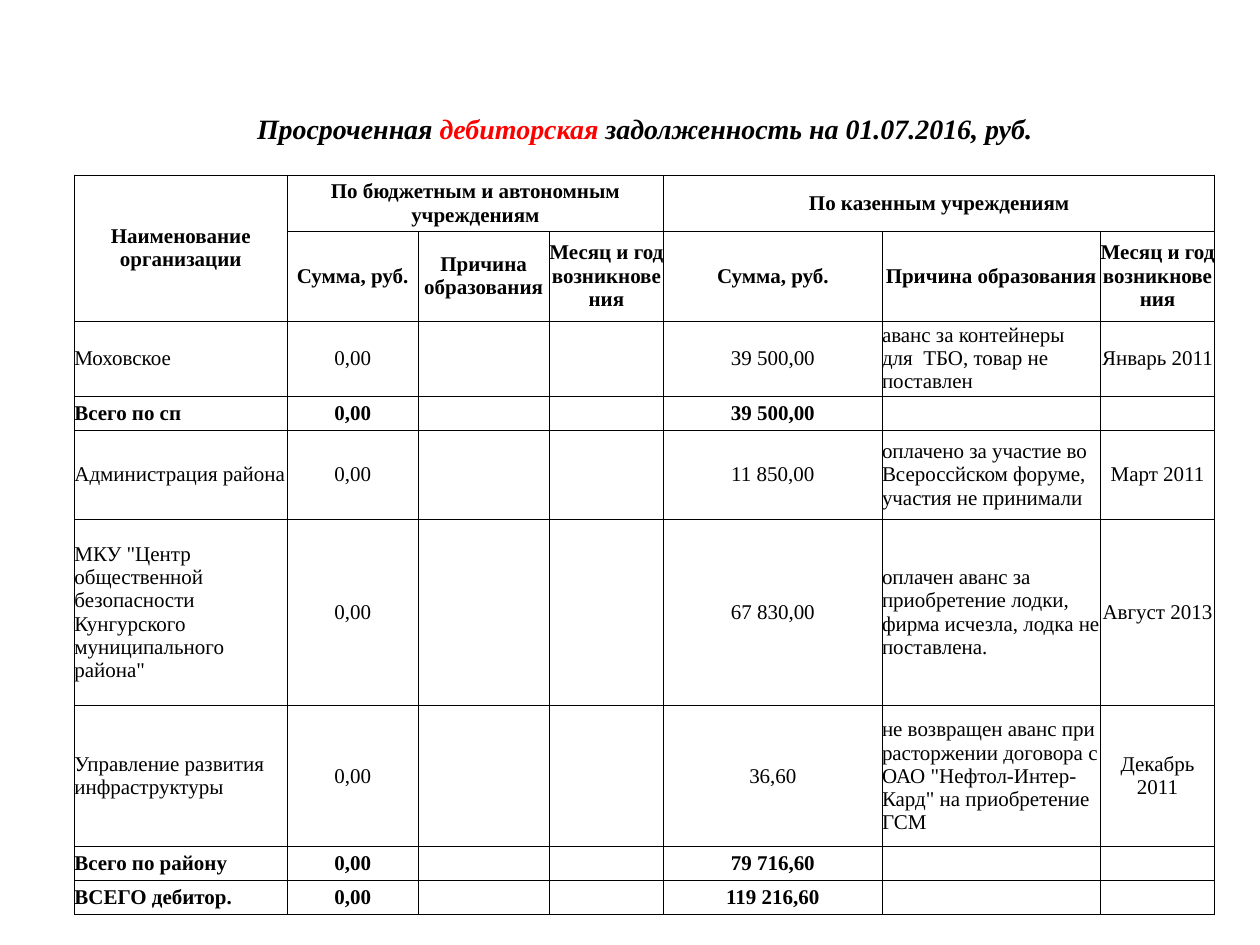
from lxml import etree
from pptx import Presentation
from pptx.dml.color import RGBColor
from pptx.enum.text import MSO_ANCHOR, PP_ALIGN
from pptx.oxml.ns import qn
from pptx.util import Cm, Pt

CENTER, LEFT = PP_ALIGN.CENTER, PP_ALIGN.LEFT
MIDDLE = MSO_ANCHOR.MIDDLE

COLUMN_WIDTHS = [4.29, 2.64, 2.64, 2.31, 4.4, 4.4, 2.31]
ROW_HEIGHTS = [1.8, 1.14, 1.8, 1.52, 0.68, 1.8, 3.76, 2.84, 0.68, 0.68]
REASON_COLUMN = 5

TITLE_PARTS = [
    ("Просроченная ", "000000"),
    ("дебиторская", "FF0000"),
    (" задолженность на 01.07.2016, руб.", "000000"),
]
GROUPS = ["Наименование организации", "По бюджетным и автономным учреждениям",
          "", "", "По казенным учреждениям", "", ""]
MEASURES = ["Сумма, руб.", "Причина образования", "Месяц и год возникновения"]

# organisation, amount of state institutions, reason, month, is a total
DEBTS = [
    ("Моховское", "39 500,00",
     "аванс за контейнеры для  ТБО, товар не поставлен", "Январь 2011", False),
    ("Всего по сп", "39 500,00", "", "", True),
    ("Администрация района", "11 850,00",
     "оплачено за участие во Всероссйском форуме, участия не принимали",
     "Март 2011", False),
    ('МКУ "Центр общественной безопасности Кунгурского муниципального района"',
     "67 830,00",
     "оплачен аванс за приобретение лодки, фирма исчезла, лодка не поставлена.",
     "Август 2013", False),
    ("Управление развития инфраструктуры", "36,60",
     'не возвращен аванс при расторжении договора с ОАО "Нефтол-Интер-Кард" '
     "на приобретение ГСМ", "Декабрь 2011", False),
    ("Всего по району", "79 716,60", "", "", True),
    ("ВСЕГО дебитор.", "119 216,60", "", "", True),
]


def rgb(hex_color):
    return RGBColor.from_string(hex_color)


def add_text(paragraph, text, font, size, color="000000", bold=False,
             italic=False, align=CENTER):
    paragraph.alignment = align
    if not text:
        # keeps an empty cell from growing to the default text size
        etree.SubElement(paragraph._p, qn("a:endParaRPr"), sz=str(size * 100))
        return
    run = paragraph.add_run()
    run.text = text
    run.font.name = font
    run.font.size = Pt(size)
    run.font.bold = bold
    run.font.italic = italic
    run.font.color.rgb = rgb(color)


class DebtSlide:
    font = "Times New Roman"
    title_size = 16
    body_size = 12
    fill = "FFFFFF"
    line = "000000"
    line_width = 0.5

    def __init__(self, slide):
        self.slide = slide

    def add_table(self, left, top, widths, heights):
        table = self.slide.shapes.add_table(
            len(heights), len(widths), Cm(left), Cm(top),
            Cm(sum(widths)), Cm(sum(heights))).table
        table.first_row = False
        table.horz_banding = False
        for column, width in zip(table.columns, widths):
            column.width = Cm(width)
        for row, height in zip(table.rows, heights):
            row.height = Cm(height)
        return table

    def format_cell(self, cell, sides):
        cell.margin_left = cell.margin_right = 0
        cell.margin_top = cell.margin_bottom = 0
        cell.vertical_anchor = MIDDLE
        self.add_borders(cell, sides)
        cell.fill.solid()
        cell.fill.fore_color.rgb = rgb(self.fill)

    def add_borders(self, cell, sides):
        properties = cell._tc.get_or_add_tcPr()
        for side in sides:
            border = etree.SubElement(properties, qn(f"a:ln{side}"),
                                      w=str(Pt(self.line_width)))
            solid = etree.SubElement(border, qn("a:solidFill"))
            etree.SubElement(solid, qn("a:srgbClr"), val=self.line)

    def fill_title(self, cells):
        for cell in cells:
            self.format_cell(cell, "B")
        for text, color in TITLE_PARTS:
            add_text(cells[0].text_frame.paragraphs[0], text, self.font,
                     self.title_size, color=color, bold=True, italic=True)

    def fill_row(self, cells, texts, bold, left_columns=()):
        for index, (cell, text) in enumerate(zip(cells, texts)):
            self.format_cell(cell, "LRTB")
            add_text(cell.text_frame.paragraphs[0], text, self.font,
                     self.body_size, bold=bold,
                     align=LEFT if index in left_columns else CENTER)


def main():
    presentation = Presentation()
    presentation.slide_width = Cm(25.4)
    presentation.slide_height = Cm(19.05)
    blank_layout = presentation.slide_layouts[6]
    page = DebtSlide(presentation.slides.add_slide(blank_layout))

    table = page.add_table(1.5, 1.73, COLUMN_WIDTHS, ROW_HEIGHTS)
    title_row, group_row, measure_row, *debt_rows = [
        list(row.cells) for row in table.rows]

    page.fill_title(title_row)
    page.fill_row(group_row, GROUPS, bold=True)
    page.fill_row(measure_row, [""] + MEASURES * 2, bold=True)
    for cells, (name, amount, reason, month, is_total) in zip(debt_rows, DEBTS):
        page.fill_row(cells, [name, "0,00", "", "", amount, reason, month],
                      bold=is_total, left_columns=(0, REASON_COLUMN))

    title_row[0].merge(title_row[-1])
    group_row[0].merge(measure_row[0])
    group_row[1].merge(group_row[3])
    group_row[4].merge(group_row[6])

    presentation.save("out.pptx")


if __name__ == "__main__":
    main()
